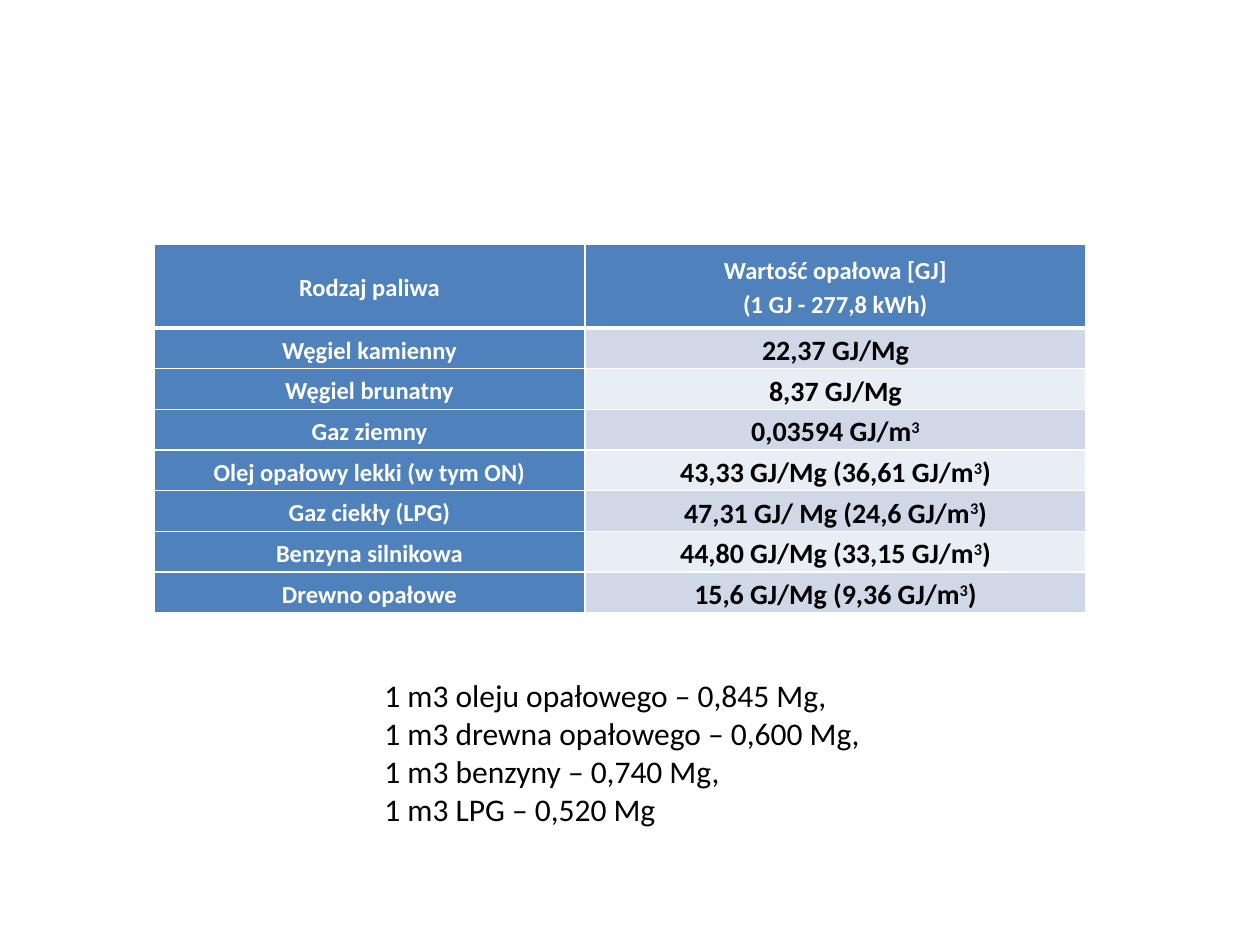
from dataclasses import dataclass

from lxml import etree
from pptx import Presentation
from pptx import util as u
from pptx.dml.color import RGBColor
from pptx.enum import text as t
from pptx.oxml.ns import qn

PX = u.Inches(1) / 126


@dataclass(frozen=True)
class Theme:
    font: str = "Calibri"
    white: str = "FFFFFF"
    black: str = "000000"
    blue: str = "4F81BD"
    bands: tuple = ("D0D8E8", "E9EDF4")
    label_size: int = 14
    value_size: int = 16
    note_size: int = 18
    rule: int = 1
    header_rule: int = 3


THEME = Theme()

HEADER = ("Rodzaj paliwa", "Wartość opałowa [GJ]\n(1 GJ - 277,8 kWh)")
FUELS = (
    ("Węgiel kamienny", "22,37 GJ/Mg"),
    ("Węgiel brunatny", "8,37 GJ/Mg"),
    ("Gaz ziemny", "0,03594 GJ/m^3"),
    ("Olej opałowy lekki (w tym ON)", "43,33 GJ/Mg (36,61 GJ/m^3^)"),
    ("Gaz ciekły (LPG)", "47,31 GJ/ Mg (24,6 GJ/m^3^)"),
    ("Benzyna silnikowa", "44,80 GJ/Mg (33,15 GJ/m^3^)"),
    ("Drewno opałowe", "15,6 GJ/Mg (9,36 GJ/m^3^)"),
)
DENSITIES = """1 m3 oleju opałowego – 0,845 Mg,
1 m3 drewna opałowego – 0,600 Mg,
1 m3 benzyny – 0,740 Mg,
1 m3 LPG – 0,520 Mg"""


def px(length):
    return u.Emu(round(length * PX))


def write_text(frame, content, *, size, color, bold=False, align=None, spacing=None):
    for index, line in enumerate(content.split("\n")):
        paragraph = frame.paragraphs[0] if index == 0 else frame.add_paragraph()
        paragraph.alignment = align
        paragraph.line_spacing = spacing
        for position, part in enumerate(line.split("^")):
            if not part:
                continue
            run = paragraph.add_run()
            run.text = part
            run.font.name = THEME.font
            run.font.size = u.Pt(size)
            run.font.bold = bold
            run.font.color.rgb = RGBColor.from_string(color)
            if position % 2:
                run.font._element.set("baseline", "30000")


def set_borders(cell, top, bottom):
    properties = cell._tc.get_or_add_tcPr()
    widths = {"lnL": THEME.rule, "lnR": THEME.rule, "lnT": top, "lnB": bottom}
    for side, width in widths.items():
        line = etree.SubElement(properties, qn(f"a:{side}"), w=str(u.Pt(width)))
        fill = etree.SubElement(line, qn("a:solidFill"))
        etree.SubElement(fill, qn("a:srgbClr"), val=THEME.white)


def format_cell(cell, content, row, column):
    is_value = row > 0 and column == 1
    cell.margin_left = cell.margin_right = px(9)
    cell.margin_top = cell.margin_bottom = 0
    cell.vertical_anchor = t.MSO_ANCHOR.MIDDLE
    set_borders(
        cell,
        THEME.header_rule if row == 1 else THEME.rule,
        THEME.header_rule if row == 0 else THEME.rule,
    )
    cell.fill.solid()
    fill = THEME.bands[(row - 1) % 2] if is_value else THEME.blue
    cell.fill.fore_color.rgb = RGBColor.from_string(fill)
    write_text(
        cell.text_frame,
        content,
        size=THEME.value_size if is_value else THEME.label_size,
        color=THEME.black if is_value else THEME.white,
        bold=True,
        align=t.PP_ALIGN.CENTER,
        spacing=1.15,
    )


def add_fuel_table(slide, left, top, width, height):
    label_width, header_height = 431, 84
    rows = (HEADER, *FUELS)
    table = slide.shapes.add_table(
        len(rows), len(HEADER), px(left), px(top), px(width), px(height)
    ).table
    table.columns[0].width = px(label_width)
    table.columns[1].width = px(width - label_width)
    fuel_height = (height - header_height) / len(FUELS)
    for row, values in enumerate(rows):
        table.rows[row].height = px(fuel_height if row else header_height)
        for column, content in enumerate(values):
            format_cell(table.cell(row, column), content, row, column)


def add_density_notes(slide, left, top, width, height):
    box = slide.shapes.add_textbox(px(left), px(top), px(width), px(height))
    box.text_frame.word_wrap = False
    box.text_frame.auto_size = t.MSO_AUTO_SIZE.SHAPE_TO_FIT_TEXT
    write_text(box.text_frame, DENSITIES, size=THEME.note_size, color=THEME.black)


def main():
    presentation = Presentation()
    presentation.slide_width = px(1260)
    presentation.slide_height = px(945)
    slide = presentation.slides.add_slide(presentation.slide_layouts[6])
    add_fuel_table(slide, 154, 244, 932, 369)
    add_density_notes(slide, 372, 670, 507, 165)
    presentation.save("out.pptx")


if __name__ == "__main__":
    main()
